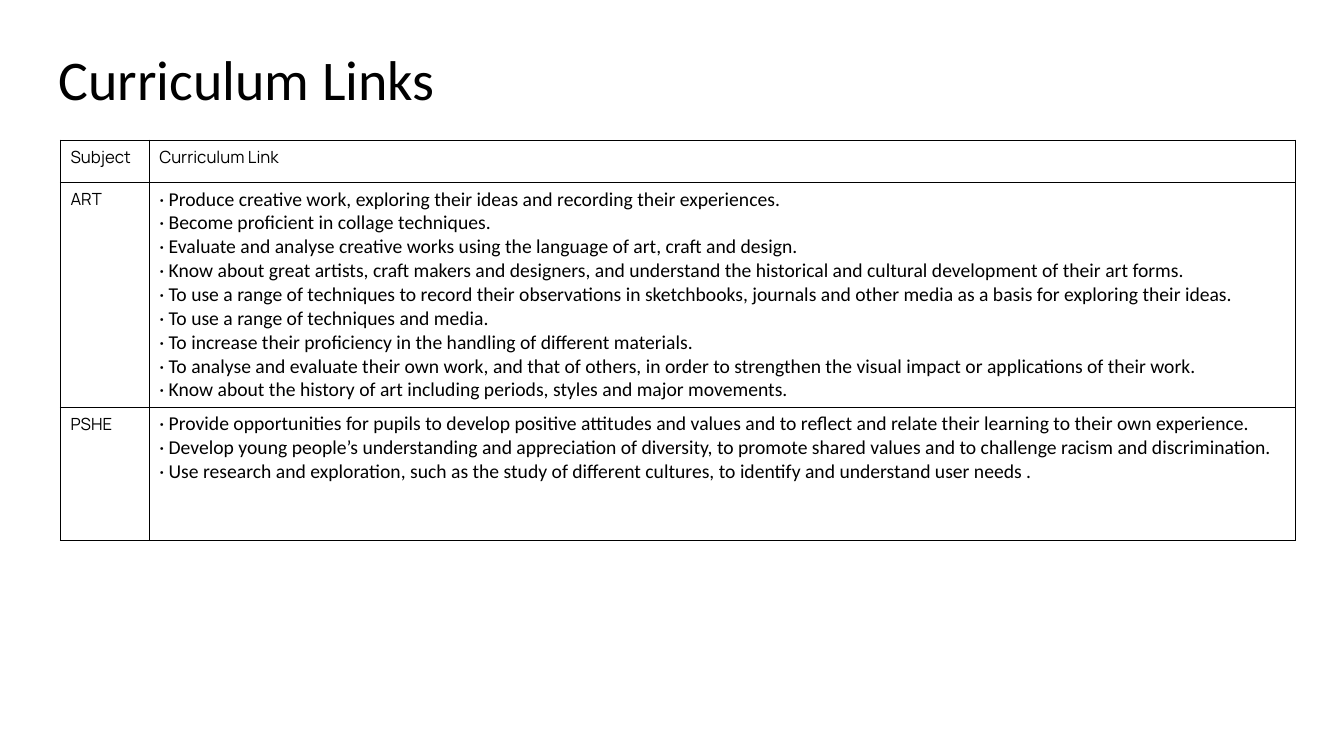
from lxml.etree import SubElement
from pptx import Presentation
from pptx.dml.color import RGBColor as RGB
from pptx.enum.text import MSO_ANCHOR as ANCHOR, PP_ALIGN as ALIGN
from pptx.oxml.ns import qn
from pptx.util import Inches, Pt

COLORS = {"ink": "000000", "paper": "FFFFFF"}
HEADING_FONT, BODY_FONT = "Manrope", "Calibri"
COLUMNS = (0.88, 11.37)
ROWS = (0.42, 2.23, 1.32)
HEADER = ("Subject", "Curriculum Link")
LINKS = {
    "ART": (
        "Produce creative work, exploring their ideas and recording their experiences.",
        "Become proficient in collage techniques.",
        "Evaluate and analyse creative works using the language of art, craft and design.",
        "Know about great artists, craft makers and designers, and understand the historical "
        "and cultural development of their art forms.",
        "To use a range of techniques to record their observations in sketchbooks, journals "
        "and other media as a basis for exploring their ideas.",
        "To use a range of techniques and media.",
        "To increase their proficiency in the handling of different materials.",
        "To analyse and evaluate their own work, and that of others, in order to strengthen "
        "the visual impact or applications of their work.",
        "Know about the history of art including periods, styles and major movements.",
    ),
    "PSHE": (
        "Provide opportunities for pupils to develop positive attitudes and values and to "
        "reflect and relate their learning to their own experience.",
        "Develop young people’s understanding and appreciation of diversity, to promote "
        "shared values and to challenge racism and discrimination.",
        "Use research and exploration, such as the study of different cultures, to identify "
        "and understand user needs .",
    ),
}


def style(p, font, size):
    """Set the font of a paragraph."""
    p.font.name, p.font.size, p.font.bold = font, Pt(size), False
    p.font.color.rgb = RGB.from_string(COLORS["ink"])


def add_borders(cell):
    """Draw a thin line on the four sides of a cell."""
    props = cell._tc.get_or_add_tcPr()
    for i, side in enumerate(("lnL", "lnR", "lnT", "lnB")):
        ln = props.makeelement(qn(f"a:{side}"), {"w": str(Pt(1))})
        fill = SubElement(ln, qn("a:solidFill"))
        SubElement(fill, qn("a:srgbClr"), val=COLORS["ink"])
        props.insert(i, ln)


def fill_cell(cell, lines, font, size):
    """Write lines into a bordered white cell."""
    cell.fill.solid()
    cell.fill.fore_color.rgb = RGB.from_string(COLORS["paper"])
    add_borders(cell)
    cell.text_frame.text = "\n".join(lines)
    for p in cell.text_frame.paragraphs:
        style(p, font, size)


def add_title(slide, text, box):
    """Place the slide title in the box."""
    s = slide.shapes.title
    s.left, s.top, s.width, s.height = map(Inches, box)
    tf = s.text_frame
    tf.text, tf.vertical_anchor = text, ANCHOR.MIDDLE
    p = tf.paragraphs[0]
    p.alignment, p.line_spacing = ALIGN.LEFT, 0.9
    style(p, BODY_FONT, 40)


def add_links_table(slide, left, top):
    """Place the table of subjects and their curriculum links."""
    size = (sum(COLUMNS), sum(ROWS))
    table = slide.shapes.add_table(
        len(ROWS), len(COLUMNS), *map(Inches, (left, top, *size))).table
    for column, width in zip(table.columns, COLUMNS):
        column.width = Inches(width)
    for row, height in zip(table.rows, ROWS):
        row.height = Inches(height)
    for c, heading in enumerate(HEADER):
        fill_cell(table.cell(0, c), [heading], HEADING_FONT, 12)
    for r, (subject, links) in enumerate(LINKS.items(), 1):
        fill_cell(table.cell(r, 0), [subject], HEADING_FONT, 12)
        fill_cell(table.cell(r, 1), [f"· {link}" for link in links], BODY_FONT, 14)


def main():
    """Build and save the slide."""
    prs = Presentation()
    prs.slide_width, prs.slide_height = Inches(13.33), Inches(7.5)
    slide = prs.slides.add_slide(prs.slide_layouts[5])
    add_title(slide, "Curriculum Links", (0.48, 0.09, 11.5, 1.45))
    add_links_table(slide, 0.6, 1.39)
    prs.save("out.pptx")


if __name__ == "__main__":
    main()
